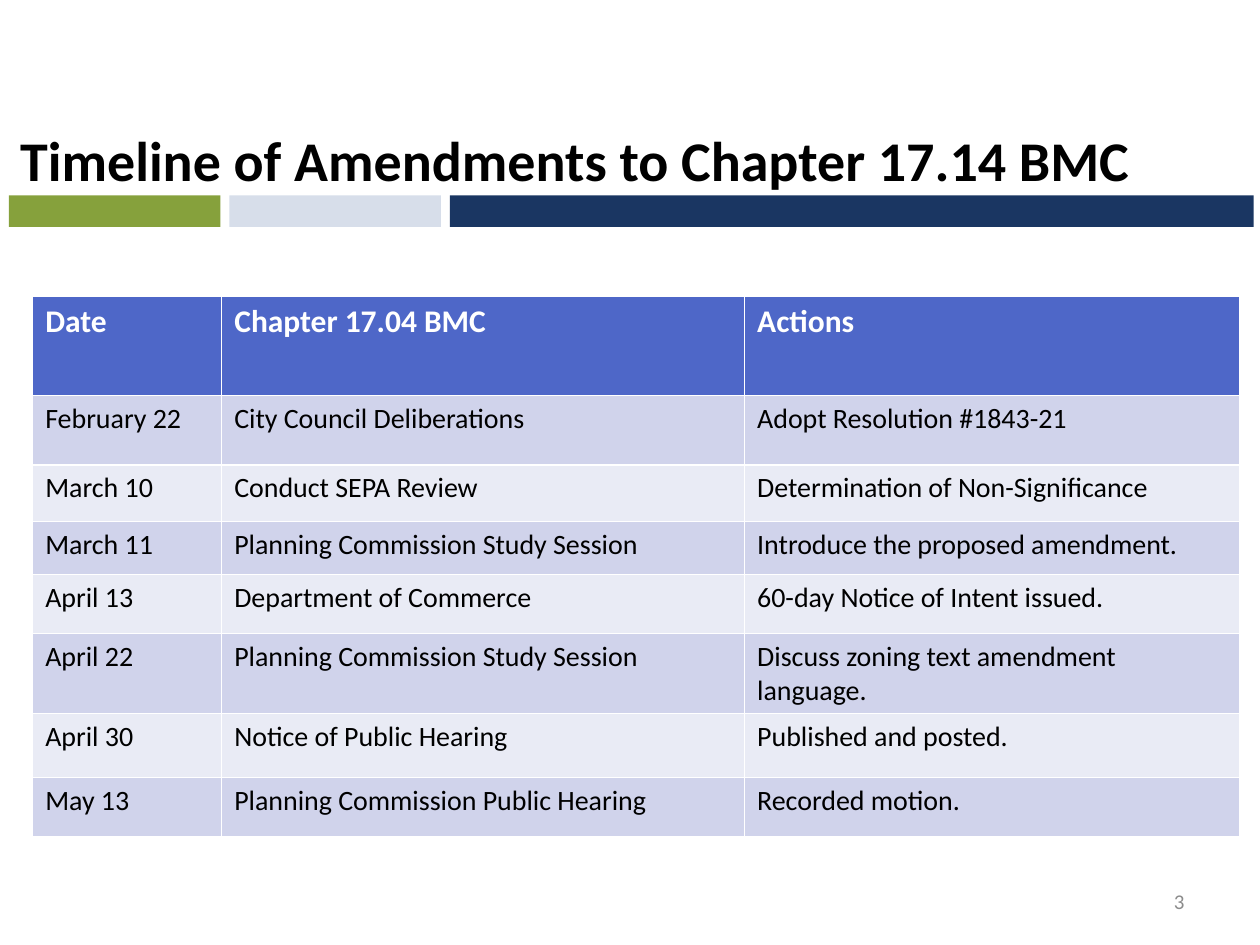
from pptx import Presentation
from pptx.dml.color import RGBColor
from pptx.enum.shapes import MSO_SHAPE
from pptx.enum.text import MSO_ANCHOR, PP_ALIGN
from pptx.util import Inches, Pt

RECT = MSO_SHAPE.RECTANGLE
BOTTOM, MIDDLE = MSO_ANCHOR.BOTTOM, MSO_ANCHOR.MIDDLE
LEFT, RIGHT = PP_ALIGN.LEFT, PP_ALIGN.RIGHT

BARS = [(1.68, "86A13C"), (1.68, "D7DEEA"), (6.38, "1A3662")]
GAP = 0.07
COLS = [1.5, 4.15, 3.93]
HEIGHTS = [0.79, 0.55, 0.45, 0.42, 0.47, 0.52, 0.51, 0.47]
HEAD, BANDS = "4E67C8", ["E9EBF5", "D0D3EB"]
ROWS = [
    ("Date", "Chapter 17.04 BMC", "Actions"),
    ("February 22", "City Council Deliberations", "Adopt Resolution #1843-21"),
    ("March 10", "Conduct SEPA Review", "Determination of Non-Significance"),
    ("March 11", "Planning Commission Study Session", "Introduce the proposed amendment."),
    ("April 13", "Department of Commerce", "60-day Notice of Intent issued."),
    ("April 22", "Planning Commission Study Session", "Discuss zoning text amendment language."),
    ("April 30", "Notice of Public Hearing", "Published and posted."),
    ("May 13", "Planning Commission Public Hearing", "Recorded motion."),
]


def paint(fill, color):
    fill.solid()
    fill.fore_color.rgb = RGBColor.from_string(color)


def write(frame, text, size, color, bold=False, align=LEFT):
    frame.text = text
    para = frame.paragraphs[0]
    para.alignment = align
    font = para.font
    font.name, font.size, font.bold = "Calibri", Pt(size), bold
    font.color.rgb = RGBColor.from_string(color)


def add_bars(slide, left, top, height):
    for width, color in BARS:
        bar = slide.shapes.add_shape(RECT, Inches(left), Inches(top), Inches(width), Inches(height))
        bar.shadow.inherit = False
        paint(bar.fill, color)
        bar.line.fill.background()
        left += width + GAP


def add_title(slide, left, top, width, height):
    title = slide.shapes.title
    title.left, title.top = Inches(left), Inches(top)
    title.width, title.height = Inches(width), Inches(height)
    write(title.text_frame, "Timeline of Amendments to Chapter 17.14 BMC", 32, "000000", True)
    title.text_frame.vertical_anchor = BOTTOM


def add_dates(slide, left, top):
    table = slide.shapes.add_table(
        len(ROWS), len(COLS), Inches(left), Inches(top),
        Inches(sum(COLS)), Inches(sum(HEIGHTS))).table
    for col, width in zip(table.columns, COLS):
        col.width = Inches(width)
    for i, (row, height, texts) in enumerate(zip(table.rows, HEIGHTS, ROWS)):
        row.height = Inches(height)
        for cell, text in zip(row.cells, texts):
            if i == 0:
                paint(cell.fill, HEAD)
                write(cell.text_frame, text, 18, "FFFFFF", True)
            else:
                paint(cell.fill, BANDS[i % 2])
                write(cell.text_frame, text, 16, "000000")


def add_number(slide, left, top, width, height):
    box = slide.shapes.add_textbox(Inches(left), Inches(top), Inches(width), Inches(height))
    frame = box.text_frame
    frame.word_wrap = True
    frame.vertical_anchor = MIDDLE
    write(frame, "3", 12, "8C8C8C", align=RIGHT)


def main():
    deck = Presentation()
    deck.slide_width, deck.slide_height = Inches(10), Inches(7.5)
    slide = deck.slides.add_slide(deck.slide_layouts[5])
    add_bars(slide, 0.07, 1.55, 0.25)
    add_title(slide, 0.06, 0.08, 9.44, 1.5)
    add_number(slide, 7.17, 6.95, 2.33, 0.4)
    add_dates(slide, 0.26, 2.35)
    deck.save("out.pptx")


if __name__ == "__main__":
    main()
